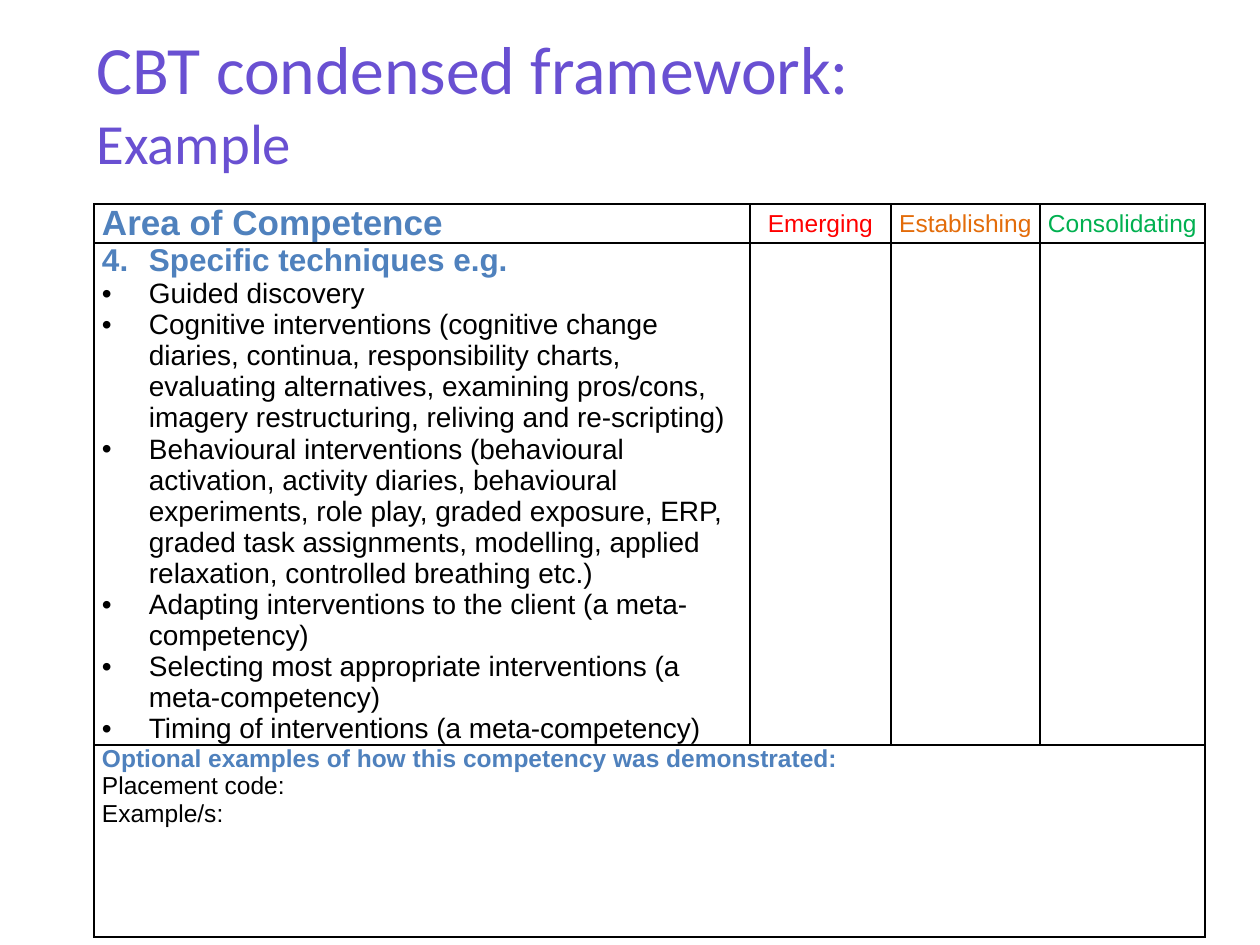
import pptx
import pptx.dml.color
import pptx.enum.text
import pptx.oxml
import pptx.oxml.ns
import pptx.util

PX = 914400 // 126
COLOURS = {
    "title": "6950D2",
    "heading": "4F81BD",
    "text": "000000",
    "Emerging": "FF0000",
    "Establishing": "E36C0A",
    "Consolidating": "00B050",
}
COLUMN_WIDTHS = [656, 141, 149, 165]
ROW_HEIGHTS = [39, 502, 192]
TECHNIQUES = [
    "Guided discovery",
    "Cognitive interventions (cognitive change diaries, continua, responsibility charts, "
    "evaluating alternatives, examining pros/cons, imagery restructuring, reliving and re-scripting)",
    "Behavioural interventions (behavioural activation, activity diaries, behavioural experiments, "
    "role play, graded exposure, ERP, graded task assignments, modelling, applied relaxation, "
    "controlled breathing etc.)",
    "Adapting interventions to the client (a meta-competency)",
    "Selecting most appropriate interventions (a meta-competency)",
    "Timing of interventions (a meta-competency)",
]
BULLET = '<a:buChar {} char="•"/>'
NUMBER = '<a:buAutoNum {} type="arabicPeriod" startAt="4"/>'
NAMESPACE = pptx.oxml.ns.nsdecls("a")
ALIGN = pptx.enum.text.PP_ALIGN
ANCHOR = pptx.enum.text.MSO_ANCHOR


def add_run(paragraph, text, size, colour, bold=False, font="Arial"):
    run = paragraph.add_run()
    run.text = text
    run.font.name = font
    run.font.size = pptx.util.Pt(size)
    run.font.bold = bold
    run.font.color.rgb = pptx.dml.color.RGBColor.from_string(COLOURS[colour])


def add_list_item(paragraph, marker, text, size, colour, bold=False):
    """Add text with a hanging bullet or number."""
    properties = paragraph._p.get_or_add_pPr()
    properties.set("marL", str(47 * PX))
    properties.set("indent", str(-47 * PX))
    for element in ('<a:buFont {} typeface="Arial"/>', marker):
        properties.append(pptx.oxml.parse_xml(element.format(NAMESPACE)))
    add_run(paragraph, text, size, colour, bold)


presentation = pptx.Presentation()
presentation.slide_width = 1260 * PX
presentation.slide_height = 945 * PX
slide = presentation.slides.add_slide(presentation.slide_layouts[5])

# Title
title = slide.shapes.title
title.left, title.top, title.width, title.height = (n * PX for n in (84, 38, 1033, 127))
title.text_frame.auto_size = pptx.enum.text.MSO_AUTO_SIZE.NONE
title.text_frame.vertical_anchor = ANCHOR.MIDDLE
paragraph = title.text_frame.paragraphs[0]
paragraph.alignment = ALIGN.LEFT
add_run(paragraph, "CBT condensed framework:", 38.7, "title", font="Calibri")
paragraph.add_line_break()
add_run(paragraph, "Example", 32.4, "title", font="Calibri")

# Table grid
table = slide.shapes.add_table(
    3, 4, 94 * PX, 204 * PX, sum(COLUMN_WIDTHS) * PX, sum(ROW_HEIGHTS) * PX
).table
for column, width in zip(table.columns, COLUMN_WIDTHS):
    column.width = width * PX
for row, height in zip(table.rows, ROW_HEIGHTS):
    row.height = height * PX
table.cell(2, 0).merge(table.cell(2, 3))
for cell in table.iter_cells():
    cell.margin_left = cell.margin_right = 8 * PX
    cell.margin_top = cell.margin_bottom = 0
    for side in ("lnL", "lnR", "lnT", "lnB"):
        cell._tc.get_or_add_tcPr().append(pptx.oxml.parse_xml(
            f'<a:{side} {NAMESPACE} w="12700"><a:solidFill>'
            f'<a:srgbClr val="{COLOURS["text"]}"/></a:solidFill></a:{side}>'
        ))
    cell.fill.background()

# Header row
for cell in table.rows[0].cells:
    cell.vertical_anchor = ANCHOR.MIDDLE
add_run(table.cell(0, 0).text_frame.paragraphs[0], "Area of Competence", 20, "heading", True)
for index, level in enumerate(("Emerging", "Establishing", "Consolidating"), 1):
    paragraph = table.cell(0, index).text_frame.paragraphs[0]
    paragraph.alignment = ALIGN.CENTER
    add_run(paragraph, level, 14, level)

# Techniques
frame = table.cell(1, 0).text_frame
add_list_item(frame.paragraphs[0], NUMBER, "Specific techniques e.g.", 18, "heading", True)
for technique in TECHNIQUES:
    add_list_item(frame.add_paragraph(), BULLET, technique, 16, "text")

# Examples
frame = table.cell(2, 0).text_frame
add_run(frame.paragraphs[0], "Optional examples of how this competency was demonstrated:",
        14, "heading", True)
for label in ("Placement code:", "Example/s:"):
    add_run(frame.add_paragraph(), label, 14, "text")

presentation.save("out.pptx")
